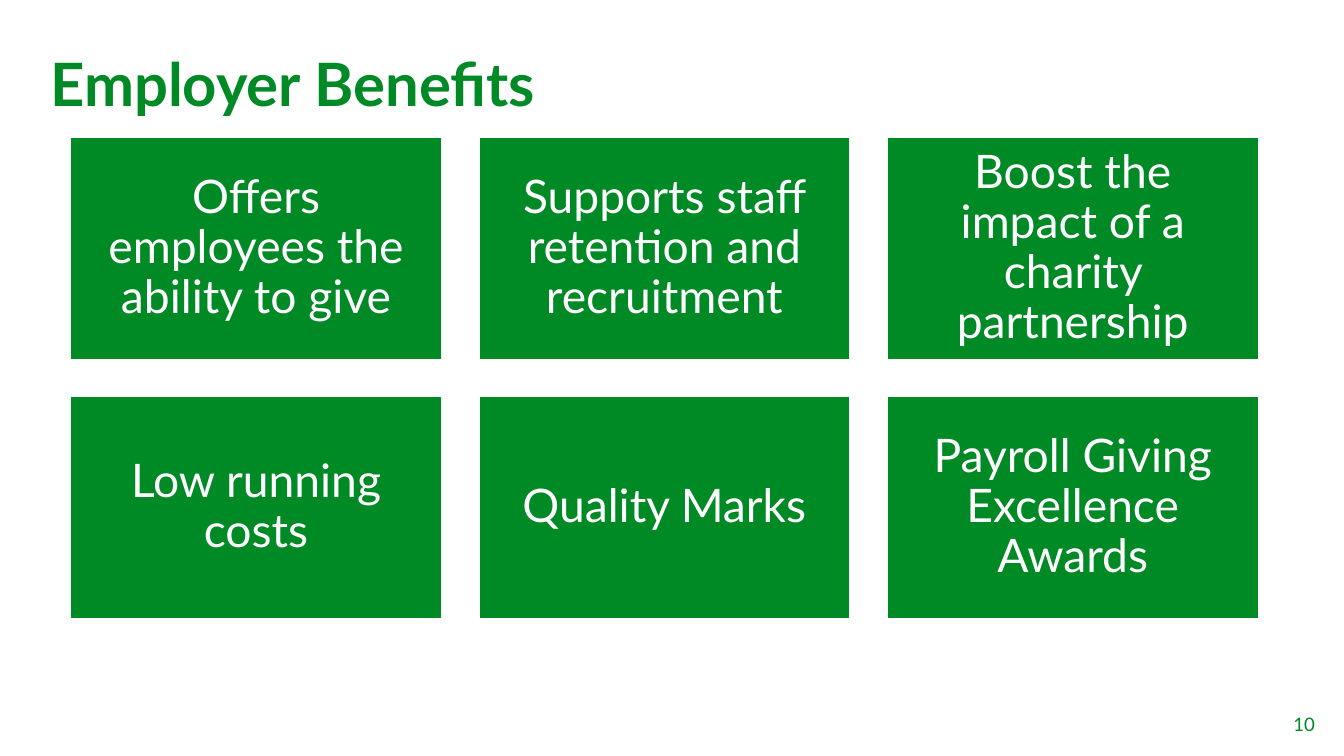
from dataclasses import dataclass

import pptx
import pptx.dml.color
import pptx.enum.shapes
import pptx.enum.text
import pptx.slide
import pptx.text.text
import pptx.util
from pptx.util import Inches

GREEN = pptx.dml.color.RGBColor(0x00, 0x8A, 0x26)
WHITE = pptx.dml.color.RGBColor(0xFF, 0xFF, 0xFF)
FONT = "Lato"

COLUMNS = 3
TILE_LEFT, TILE_TOP = 0.7, 1.36
TILE_WIDTH, TILE_HEIGHT = 3.68, 2.21
COLUMN_STEP, ROW_STEP = 4.05, 2.57
TILE_INSET = Inches(0.14)

BENEFITS = [
    "Offers employees the ability to give",
    "Supports staff retention and recruitment",
    "Boost the impact of a charity partnership",
    "Low running costs",
    "Quality Marks",
    "Payroll Giving Excellence Awards",
]


@dataclass(frozen=True)
class TextStyle:
    size: float
    color: pptx.dml.color.RGBColor
    align: pptx.enum.text.PP_ALIGN
    anchor: pptx.enum.text.MSO_ANCHOR
    bold: bool = False
    line_spacing: float = 0.9


TITLE = TextStyle(42.7, GREEN, pptx.enum.text.PP_ALIGN.LEFT, pptx.enum.text.MSO_ANCHOR.TOP, bold=True)
BENEFIT = TextStyle(33, WHITE, pptx.enum.text.PP_ALIGN.CENTER, pptx.enum.text.MSO_ANCHOR.MIDDLE)
PAGE_NUMBER = TextStyle(
    13.3, GREEN, pptx.enum.text.PP_ALIGN.RIGHT, pptx.enum.text.MSO_ANCHOR.TOP, line_spacing=1.0
)


def write(frame: pptx.text.text.TextFrame, text: str, style: TextStyle) -> None:
    frame.text = text
    frame.word_wrap = True
    frame.auto_size = pptx.enum.text.MSO_AUTO_SIZE.NONE
    frame.vertical_anchor = style.anchor
    paragraph = frame.paragraphs[0]
    paragraph.alignment = style.align
    paragraph.line_spacing = style.line_spacing
    paragraph.space_before = pptx.util.Pt(0)
    font = paragraph.runs[0].font
    font.name = FONT
    font.size = pptx.util.Pt(style.size)
    font.bold = style.bold
    font.color.rgb = style.color


def add_title(slide: pptx.slide.Slide) -> None:
    title = slide.shapes.title
    title.left, title.top = Inches(0.4), Inches(0.49)
    title.width, title.height = Inches(5.88), Inches(1.11)
    write(title.text_frame, "Employer Benefits", TITLE)


def add_benefit(slide: pptx.slide.Slide, index: int, text: str) -> None:
    row, column = divmod(index, COLUMNS)
    tile = slide.shapes.add_shape(
        pptx.enum.shapes.MSO_SHAPE.RECTANGLE,
        Inches(TILE_LEFT + column * COLUMN_STEP),
        Inches(TILE_TOP + row * ROW_STEP),
        Inches(TILE_WIDTH),
        Inches(TILE_HEIGHT),
    )
    tile.shadow.inherit = False
    tile.fill.solid()
    tile.fill.fore_color.rgb = GREEN
    tile.line.color.rgb = WHITE
    tile.line.width = pptx.util.Pt(1)
    frame = tile.text_frame
    frame.margin_left = frame.margin_right = TILE_INSET
    frame.margin_top = frame.margin_bottom = TILE_INSET
    write(frame, text, BENEFIT)


def add_page_number(slide: pptx.slide.Slide) -> None:
    page_number = slide.shapes.add_textbox(Inches(10.76), Inches(7.02), Inches(2.38), Inches(0.32))
    write(page_number.text_frame, "10", PAGE_NUMBER)


def main() -> None:
    presentation = pptx.Presentation()
    presentation.slide_width = Inches(13.33)
    presentation.slide_height = Inches(7.5)
    slide = presentation.slides.add_slide(presentation.slide_layouts.get_by_name("Title Only"))
    add_title(slide)
    add_page_number(slide)
    for index, text in enumerate(BENEFITS):
        add_benefit(slide, index, text)
    presentation.save("out.pptx")


if __name__ == "__main__":
    main()
